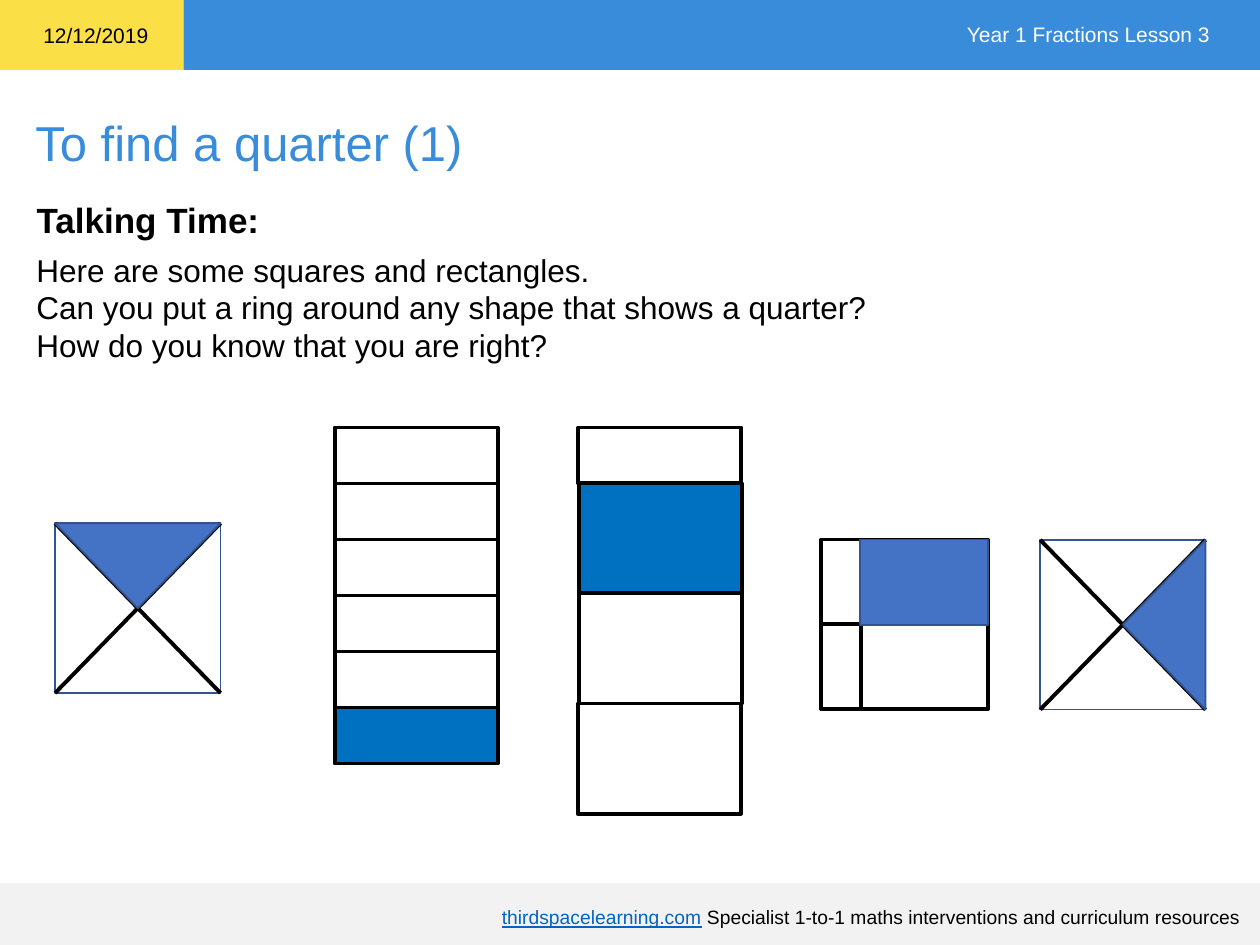
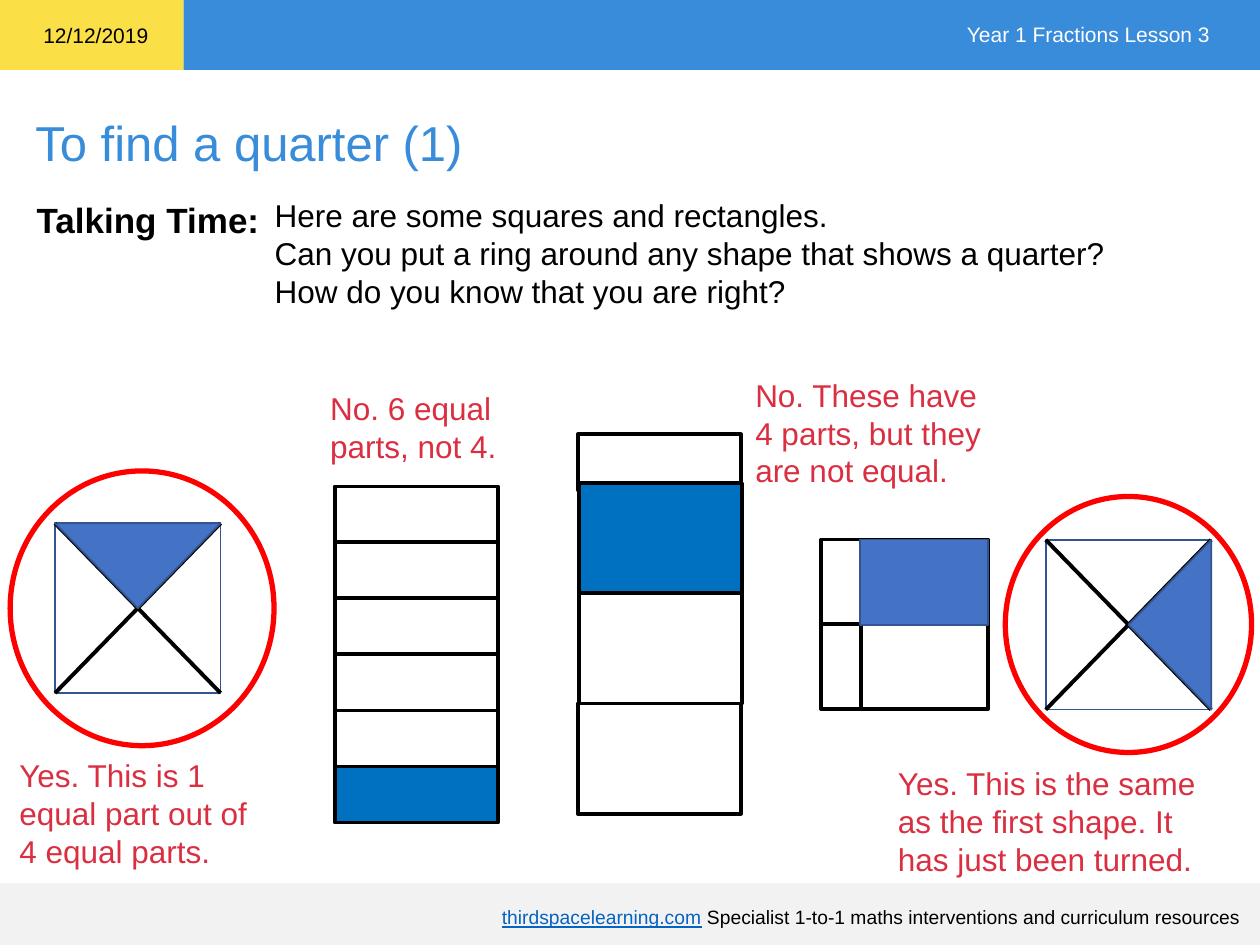
from dataclasses import dataclass

from lxml import etree
from pptx import Presentation
from pptx.dml.color import RGBColor
from pptx.enum import shapes, text
from pptx.oxml import ns
from pptx.util import Pt


@dataclass(frozen=True)
class Theme:
    font: str = "Arial"
    yellow: str = "FADF47"
    blue: str = "388CDA"
    grey: str = "F2F2F2"
    white: str = "FFFFFF"
    black: str = "000000"
    link: str = "0563C1"
    answer: str = "DA2E41"
    ring: str = "FF0000"
    strong_part: str = "0070C0"
    soft_part: str = "4472C4"
    soft_edge: str = "325491"
    title_size: float = 28
    heading_size: float = 20
    body_size: float = 18
    band_size: float = 12
    footer_size: float = 11
    thin: float = 1
    thick: float = 2.25
    ring_width: float = 3


theme = Theme()
preset = shapes.MSO_SHAPE


def draw(slide, kind, at, fill=None, edge=None, width=theme.thick, turn=0):
    shape = slide.shapes.add_shape(kind, *map(Pt, at))
    shape.shadow.inherit = False
    shape.rotation = turn
    if fill:
        shape.fill.solid()
        shape.fill.fore_color.rgb = RGBColor.from_string(fill)
    else:
        shape.fill.background()
    if edge:
        shape.line.color.rgb = RGBColor.from_string(edge)
        shape.line.width = Pt(width)
    else:
        shape.line.fill.background()
    return shape


def write(slide, at, words, size, color=theme.black, align=text.PP_ALIGN.LEFT):
    frame = slide.shapes.add_textbox(*map(Pt, at)).text_frame
    frame.word_wrap = True
    frame.text = words
    for paragraph in frame.paragraphs:
        paragraph.alignment = align
        for run in paragraph.runs:
            run.font.name = theme.font
            run.font.size = Pt(size)
            run.font.color.rgb = RGBColor.from_string(color)
    return frame


prompt = ("Here are some squares and rectangles.\n"
          "Can you put a ring around any shape that shows a quarter?\n"
          "How do you know that you are right?")

# What differs between the question and the answer slide
pages = [
    dict(prompt_at=(13.7, 139.7, 696, 73), sixths_top=244.3,
         small_part=(330.5, 244.3), turned_left=594.4, rings=[], answers=[]),
    dict(prompt_at=(149.8, 108.7, 495, 73), sixths_top=278,
         small_part=(330.2, 248.2), turned_left=597.6,
         rings=[(5.8, 269.1, 150.8, 157), (574.5, 283.7, 140.7, 146.3)],
         answers=[
             ((4, 428.4, 150, 73), "Yes. This is 1\nequal part out of\n4 equal parts."),
             ((506, 433.3, 195.8, 73),
              "Yes. This is the same as the first shape. It has just been turned."),
             ((181.6, 218.9, 116, 51), "No. 6 equal\nparts, not 4."),
             ((424.5, 211.2, 154, 73),
              "No. These have\n4 parts, but they\nare not equal."),
         ]),
]

deck = Presentation()
deck.slide_width, deck.slide_height = Pt(720), Pt(540)

for page in pages:
    slide = deck.slides.add_slide(deck.slide_layouts[6])

    # Bands, date, lesson, title and footer
    draw(slide, preset.RECTANGLE, (0, 0, 105, 40), theme.yellow)
    draw(slide, preset.RECTANGLE, (105, 0, 615, 40), theme.blue)
    draw(slide, preset.RECTANGLE, (0, 504.6, 720, 35.4), theme.grey)
    write(slide, (17.7, 9.4, 80, 22), "12/12/2019", theme.band_size)
    write(slide, (530, 8.9, 168.6, 22), "Year 1 Fractions Lesson 3",
          theme.band_size, theme.white, text.PP_ALIGN.RIGHT)
    write(slide, (13.2, 60.7, 703, 41), "To find a quarter (1)",
          theme.title_size, theme.blue)
    footer = write(slide, (216, 514, 500, 20), "thirdspacelearning.com",
                   theme.footer_size, theme.link, text.PP_ALIGN.RIGHT)
    footer.paragraphs[0].runs[0].font.underline = True
    strapline = footer.paragraphs[0].add_run()
    strapline.text = " Specialist 1-to-1 maths interventions and curriculum resources"
    strapline.font.name = theme.font
    strapline.font.size = Pt(theme.footer_size)
    strapline.font.color.rgb = RGBColor.from_string(theme.black)

    # Talking prompt
    write(slide, page["prompt_at"], prompt, theme.body_size)
    heading = write(slide, (13.9, 108, 150, 32), "Talking Time:", theme.heading_size)
    heading.paragraphs[0].line_spacing = 1.07
    heading.paragraphs[0].runs[0].font.bold = True

    # Squares cut by their diagonals, and the rectangle cut off-centre
    square_width, square_height = 94.5, 97
    strokes = []
    for left, top in [(31.5, 299), (page["turned_left"], 308.5)]:
        draw(slide, preset.RECTANGLE, (left, top, square_width, square_height),
             theme.white, theme.soft_edge, theme.thin)
        right, bottom = left + square_width, top + square_height
        strokes += [(left, bottom, right, top), (left, top, right, bottom)]
    uneven = draw(slide, preset.RECTANGLE, (469.3, 308.3, 95.2, 97),
                  theme.white, theme.black)
    strokes += [(469.3, 356.8, 564.5, 356.8), (492, 405.3, 492, 308.3)]

    for x1, y1, x2, y2 in strokes:
        cut = slide.shapes.add_connector(shapes.MSO_CONNECTOR.STRAIGHT,
                                         Pt(x1), Pt(y1), Pt(x2), Pt(y2))
        cut.line.color.rgb = RGBColor.from_string(theme.black)
        cut.line.width = Pt(theme.thick)
        etree.SubElement(cut._element.spPr, ns.qn("a:effectLst"))
        if y1 == y2:
            cut.begin_connect(uneven, 1)
            cut.end_connect(uneven, 3)

    # Shaded parts of those three; the second triangle points left
    turned_right = page["turned_left"] + square_width
    depth = square_width / 2
    shaded_parts = [
        (preset.ISOSCELES_TRIANGLE, (31.5, 299, square_width, square_height / 2), 180),
        (preset.ISOSCELES_TRIANGLE,
         (turned_right - (depth + square_height) / 2,
          308.5 + (square_height - depth) / 2, square_height, depth), 270),
        (preset.RECTANGLE, (491.5, 308.3, 73, 48.8), 0),
    ]
    for kind, at, turn in shaded_parts:
        draw(slide, kind, at, theme.soft_part, theme.soft_edge, theme.thin, turn)

    # Six equal parts, the last one shaded
    for row in range(6):
        draw(slide, preset.RECTANGLE,
             (191.4, page["sixths_top"] + row * 32, 93.2, 32),
             theme.strong_part if row == 5 else theme.white, theme.black)

    # Four unequal parts, the second one shaded
    small_left, small_top = page["small_part"]
    draw(slide, preset.RECTANGLE, (small_left, small_top, 93.2, 32),
         theme.white, theme.black)
    for row, (left, fill) in enumerate([(330.8, theme.strong_part),
                                        (330.8, theme.white),
                                        (330.2, theme.white)]):
        draw(slide, preset.RECTANGLE, (left, 276 + row * 63, 93.2, 63),
             fill, theme.black)

    # Rings and answers
    for ring in page["rings"]:
        draw(slide, preset.OVAL, ring, edge=theme.ring, width=theme.ring_width)
    for at, answer in page["answers"]:
        write(slide, at, answer, theme.body_size, theme.answer)

deck.save("out.pptx")
